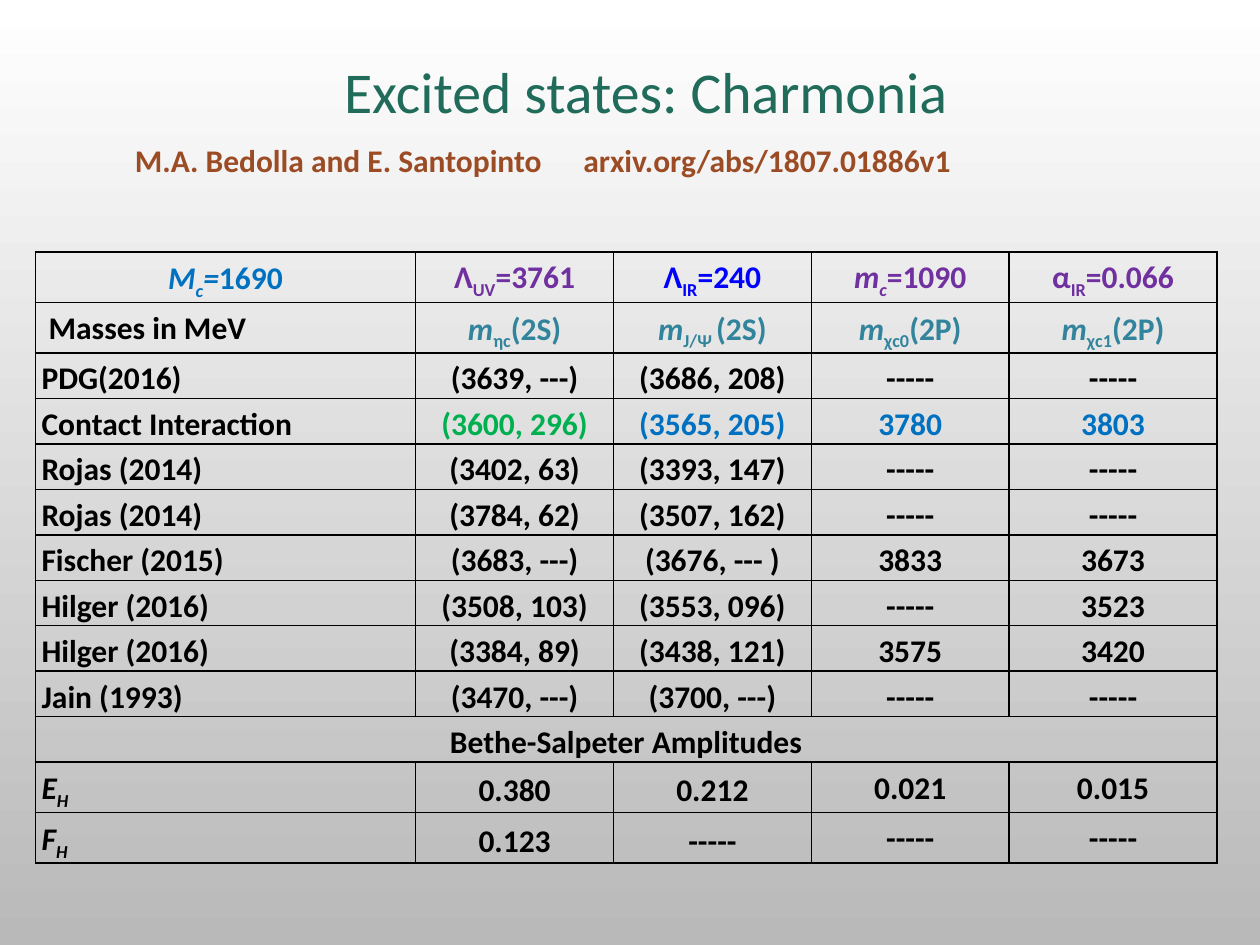
from lxml.etree import SubElement
from pptx import Presentation
from pptx.dml.color import RGBColor
from pptx.enum.text import MSO_ANCHOR as Anchor, PP_ALIGN as Align
from pptx.oxml.ns import qn
from pptx.util import Inches, Pt

GRID_COLUMNS, GRID_ROWS = 40, 30
BLACK, BLUE, PURPLE, TEAL = "000000", "0070C0", "7030A0", "31849B"
COLUMN_WIDTHS = [12.08, 6.28, 6.28, 6.28, 6.6]
ROW_HEIGHTS = [1.28, 1.6] + [1.24] * 11
ROW_COLOURS = {
    0: [BLUE, PURPLE, "0000FF", PURPLE, PURPLE],
    1: [BLACK] + [TEAL] * 4,
    3: [BLACK, "00B050", BLUE, BLUE, BLUE],
}
DASH = "-----"
AMPLITUDES = "Bethe-Salpeter Amplitudes"
MASSES = [
    ["*M_c_=*1690", "Λ_UV_=3761", "Λ_IR_=240", "*m_c_*=1090", "α_IR_=0.066"],
    [" Masses in MeV", "*m*_ηc_(2S)", "*m*_J/Ψ _(2S)", "*m*_χc0_(2P)", "*m*_χc1_(2P)"],
    ["PDG(2016)", "(3639, ---)", "(3686, 208)", DASH, DASH],
    ["Contact Interaction", "(3600, 296)", "(3565, 205)", "3780", "3803"],
    ["Rojas (2014)", "(3402, 63)", "(3393, 147)", DASH, DASH],
    ["Rojas (2014)", "(3784, 62)", "(3507, 162)", DASH, DASH],
    ["Fischer (2015)", "(3683, ---)", "(3676, --- )", "3833", "3673"],
    ["Hilger (2016)", "(3508, 103)", "(3553, 096)", DASH, "3523"],
    ["Hilger (2016)", "(3384, 89)", "(3438, 121)", "3575", "3420"],
    ["Jain (1993)", "(3470, ---)", "(3700, ---)", DASH, DASH],
    [AMPLITUDES],
    ["*E_H_*", "0.380", "0.212", "0.021", "0.015"],
    ["*F_H_*", "0.123", DASH, DASH, DASH],
]


def colour(code):
    """Turn a hex string into a colour."""
    return RGBColor.from_string(code)


def assign(target, values):
    """Set each attribute named in a dict of format values."""
    for name, value in values.items():
        setattr(target, name, value)


class SlideBuilder:
    """Holds the style and the current slide."""

    font = "Calibri"
    cell_text = {"size": Pt(18), "bold": True}

    def __init__(self, deck):
        """Add a blank page and work out the grid unit."""
        self.page = deck.slides.add_slide(deck.slide_layouts[6])
        self.column = deck.slide_width / GRID_COLUMNS
        self.row = deck.slide_height / GRID_ROWS

    def place(self, left, top, width, height):
        """Turn grid columns and rows into lengths."""
        return (round(left * self.column), round(top * self.row),
                round(width * self.column), round(height * self.row))

    def background(self, upper, lower):
        """Fill the page with a vertical gradient."""
        fill = self.page.background.fill
        fill.gradient()
        fill.gradient_angle = 270
        for stop, position, code in zip(fill.gradient_stops, (0, 1), (upper, lower)):
            stop.position = position
            stop.color.rgb = colour(code)

    def add_spans(self, para, markup, code, **style):
        """Add spans, where stars mark italics and underscores subscripts."""
        for slant, part in enumerate(markup.split("*")):
            for level, words in enumerate(part.split("_")):
                if not words:
                    continue
                span = para.add_run()
                span.text = words
                assign(span.font, {"name": self.font, "italic": slant % 2 == 1, **style})
                span.font.color.rgb = colour(code)
                if level % 2:
                    span._r.get_or_add_rPr().set("baseline", "-25000")

    def text(self, area, words, code, frame, align=Align.LEFT, tab=None, **style):
        """Add a text box with one paragraph."""
        box = self.page.shapes.add_textbox(*self.place(*area))
        assign(box.text_frame, {"word_wrap": True, **frame})
        para = box.text_frame.paragraphs[0]
        para.alignment = align
        if tab:
            stops = SubElement(para._p.get_or_add_pPr(), qn("a:tabLst"))
            SubElement(stops, qn("a:tab"), pos=str(round(tab * self.column)), algn="l")
        self.add_spans(para, words, code, **style)

    def borders(self, cell):
        """Draw a thin black line on every side of a cell."""
        properties = cell._tc.get_or_add_tcPr()
        for side in ("L", "R", "T", "B"):
            line = SubElement(properties, qn(f"a:ln{side}"), w=str(int(Pt(1))))
            fill = SubElement(line, qn("a:solidFill"))
            SubElement(fill, qn("a:srgbClr"), val=BLACK)
        cell.fill.background()

    def cell(self, cell, markup, code, align, anchor, padded):
        """Fill one table cell."""
        side, top = (Inches(0.05), Inches(0.01)) if padded else (0, 0)
        assign(cell, {"margin_left": side, "margin_right": side, "margin_top": top,
                      "margin_bottom": 0, "vertical_anchor": anchor})
        para = cell.text_frame.paragraphs[0]
        assign(para, {"alignment": align, "line_spacing": 1.15, "space_after": Pt(10)})
        self.add_spans(para, markup, code, **self.cell_text)

    def table(self, left, top, rows):
        """Add the table of masses and amplitudes."""
        area = self.place(left, top, sum(COLUMN_WIDTHS), sum(ROW_HEIGHTS))
        table = self.page.shapes.add_table(len(rows), len(COLUMN_WIDTHS), *area).table
        assign(table, {"first_row": False, "horz_banding": False})
        for column, width in zip(table.columns, COLUMN_WIDTHS):
            column.width = round(width * self.column)
        for row, height in zip(table.rows, ROW_HEIGHTS):
            row.height = round(height * self.row)
        for cell in table.iter_cells():
            self.borders(cell)
        band = rows.index([AMPLITUDES])
        table.cell(band, 0).merge(table.cell(band, len(COLUMN_WIDTHS) - 1))
        for r, row in enumerate(rows):
            codes = ROW_COLOURS.get(r, [BLACK] * len(row))
            for c, markup in enumerate(row):
                centred = c > 0 or r in (0, band)
                middle = r > 1 and 0 < c and (r < band or c < 3)
                self.cell(table.cell(r, c), markup, codes[c],
                          Align.CENTER if centred else Align.LEFT,
                          Anchor.MIDDLE if middle else Anchor.TOP,
                          padded=r > 0 or c == 0)


def main():
    """Build the slide and save it."""
    deck = Presentation()
    assign(deck, {"slide_width": Inches(10), "slide_height": Inches(7.5)})
    builder = SlideBuilder(deck)
    builder.background("FFFFFF", "B9B9B9")
    builder.table(1.12, 8, MASSES)
    builder.text((1.64, 0.84, 37.32, 3.32), "Excited states: Charmonia", "206B5A",
                 {"vertical_anchor": Anchor.BOTTOM, "margin_left": Inches(0.2)},
                 Align.CENTER, size=Pt(33))
    builder.text((3, 4.28, 40.64, 2.84),
                 "M.A. Bedolla and E. Santopinto\tarxiv.org/abs/1807.01886v1", "9B4C25",
                 {"margin_left": Inches(0.32)}, tab=14.24, size=Pt(18), bold=True)
    deck.save("out.pptx")


if __name__ == "__main__":
    main()
